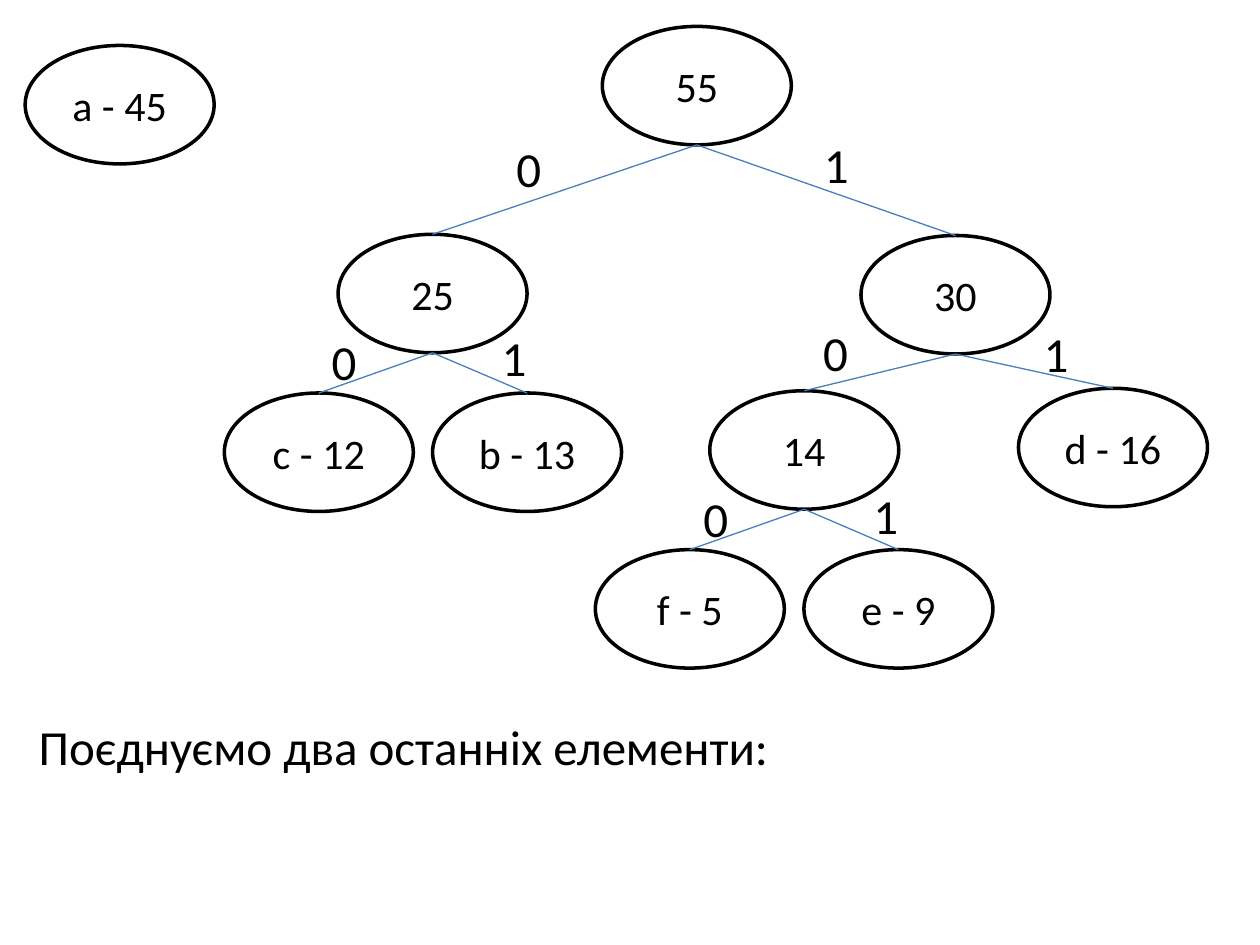
from pptx import Presentation
from pptx.dml.color import RGBColor
from pptx.enum import shapes, text
from pptx.oxml import ns
from pptx.util import Pt
from lxml import etree

COLORS = {"ink": "000000", "node": "FFFFFF", "edge": "4B7EBC"}
FONT = "Calibri"
NODE_W, NODE_H = 108, 67.7
BIT_W, BIT_H = 46.8, 41

# name: (label, left, top) relative to the tree box
NODES = {
    "b": ("b - 13", 119, 209.5),
    "c": ("c - 12", 0, 209.5),
    "cb": ("25", 65, 118.8),
    "d": ("d - 16", 453.8, 206.8),
    "e": ("e - 9", 331.2, 299),
    "f": ("f - 5", 212, 299),
    "fe": ("14", 277.4, 208.2),
    "fed": ("30", 363.8, 119.5),
    "root": ("55", 216, 0),
}
# parent: two (child, bit left, bit top), bits relative to the parent node
BRANCHES = {
    "cb": (("c", -10.8, 52), ("b", 86.4, 49.8)),
    "fe": (("f", -10.8, 52.6), ("e", 86.4, 50.4)),
    "fed": (("fe", -28.8, 46.1), ("d", 97.2, 46.8)),
    "root": (("cb", -56.2, 60.5), ("fed", 119.5, 58.3)),
}


def rgb(name):
    return RGBColor.from_string(COLORS[name])


def write(tf, words, size):
    p = tf.paragraphs[0]
    p.text = words
    p.font.name, p.font.size = FONT, Pt(size)
    p.font.color.rgb = rgb("ink")
    return p


def add_node(s, label, left, top):
    sp = s.shapes.add_shape(shapes.MSO_SHAPE.OVAL, Pt(left), Pt(top), Pt(NODE_W), Pt(NODE_H))
    sp.shadow.inherit = False
    sp.fill.solid()
    sp.fill.fore_color.rgb = rgb("node")
    sp.line.color.rgb = rgb("ink")
    sp.line.width = Pt(2)
    sp.text_frame.vertical_anchor = text.MSO_ANCHOR.MIDDLE
    write(sp.text_frame, label, 24).alignment = text.PP_ALIGN.CENTER


def add_edge(s, parent, child):
    """Join the bottom of the parent node to the top of the child node."""
    (x1, y1), (x2, y2) = parent, child
    line = s.shapes.add_connector(
        shapes.MSO_CONNECTOR.STRAIGHT,
        Pt(x1 + NODE_W / 2), Pt(y1 + NODE_H), Pt(x2 + NODE_W / 2), Pt(y2))
    line.line.color.rgb = rgb("edge")
    line.line.width = Pt(0.75)
    etree.SubElement(line._element.spPr, ns.qn("a:effectLst"))


def add_text(s, words, left, top, width, height):
    tf = s.shapes.add_textbox(Pt(left), Pt(top), Pt(width), Pt(height)).text_frame
    tf.word_wrap = True
    tf.auto_size = text.MSO_AUTO_SIZE.SHAPE_TO_FIT_TEXT
    write(tf, words, 28)


def add_tree(s, left, top):
    places = {name: (left + x, top + y) for name, (_, x, y) in NODES.items()}
    for name, (label, _, _) in NODES.items():
        add_node(s, label, *places[name])
    for parent, children in BRANCHES.items():
        px, py = places[parent]
        for bit, (child, dx, dy) in enumerate(children):
            add_edge(s, places[parent], places[child])
            add_text(s, str(bit), px + dx, py + dy, BIT_W, BIT_H)


def main():
    prs = Presentation()
    prs.slide_width, prs.slide_height = Pt(720), Pt(540)
    s = prs.slides.add_slide(prs.slide_layouts[6])
    add_node(s, "а - 45", 14.4, 26)
    add_tree(s, 128.2, 15.1)
    add_text(s, "Поєднуємо два останніх елементи:", 15, 406, 702, 41)
    prs.save("out.pptx")


if __name__ == "__main__":
    main()
